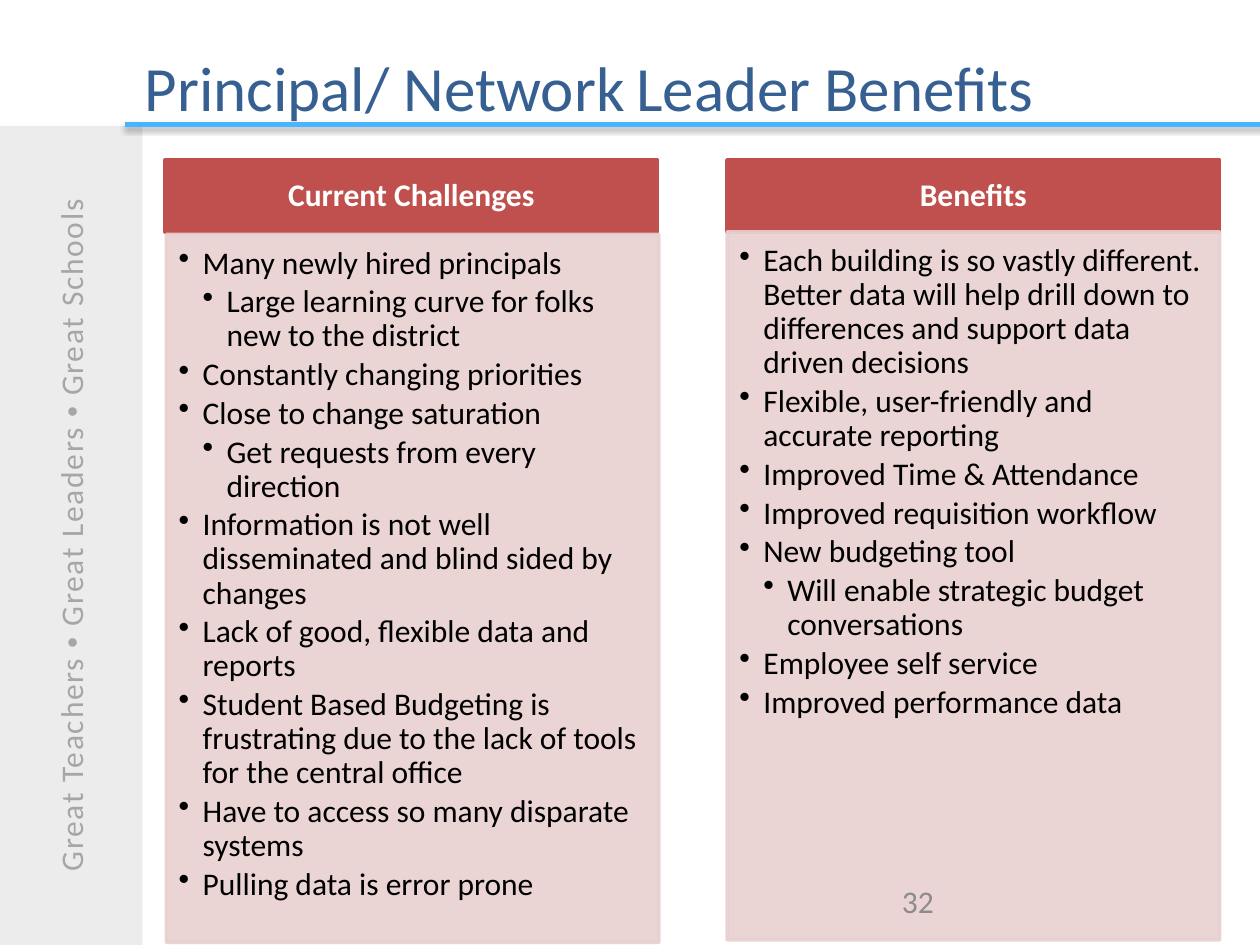
"""Build the slide comparing principals' challenges with the expected benefits."""
from dataclasses import dataclass
from typing import Optional

from lxml import etree
from pptx import Presentation, util as u
from pptx.dml.color import RGBColor
from pptx.enum import shapes, text
from pptx.oxml.ns import qn

WIDTH, HEIGHT = 10, 7.5
FONT = "Calibri"
RED, PINK, BLACK, WHITE = "C0504D", "E8D0D0", "000000", "FFFFFF"
NAVY, SKY, PALE, SILVER, GRAY = "376092", "49B4FF", "D9D9D9", "A6A6A6", "8C8C8C"
COLUMN_WIDTH, HEADER_TOP, HEADER_HEIGHT, BODY_HEIGHT = 3.91, 1.27, 0.57, 5.62
INDENT = 0.19


@dataclass(frozen=True)
class Box:
    """Position and size in inches."""
    left: float
    top: float
    width: float
    height: float

    def emu(self) -> list:
        return [u.Inches(v) for v in (self.left, self.top, self.width, self.height)]


@dataclass(frozen=True)
class Item:
    """One bullet and its nesting level."""
    words: str
    level: int = 0


@dataclass(frozen=True)
class Column:
    """A headed list with its left edges and body top."""
    heading: str
    left: float
    body_left: float
    body_top: float
    items: tuple


COLUMNS = (
    Column("Current Challenges", 1.31, 1.32, 1.86, (
        Item("Many newly hired principals"),
        Item("Large learning curve for folks new to the district", 1),
        Item("Constantly changing priorities"),
        Item("Close to change saturation"),
        Item("Get requests from every direction", 1),
        Item("Information is not well disseminated and blind sided by changes"),
        Item("Lack of good, flexible data and reports"),
        Item("Student Based Budgeting is frustrating due to the lack of tools "
             "for the central office"),
        Item("Have to access so many disparate systems"),
        Item("Pulling data is error prone"),
    )),
    Column("Benefits", 5.77, 5.77, 1.84, (
        Item("Each building is so vastly different. Better data will help drill "
             "down to differences and support data driven decisions"),
        Item("Flexible, user-friendly and accurate reporting"),
        Item("Improved Time & Attendance"),
        Item("Improved requisition workflow"),
        Item("New budgeting tool"),
        Item("Will enable strategic budget conversations", 1),
        Item("Employee self service"),
        Item("Improved performance data"),
    )),
)


def rgb(color: str) -> RGBColor:
    """Turn a hex string into a colour."""
    return RGBColor.from_string(color)


def set_font(font, color: str, size: float = 18, bold: bool = False, name: str = FONT) -> None:
    """Set face, size, weight and colour."""
    font.name, font.size, font.bold = name, u.Pt(size), bold
    font.color.rgb = rgb(color)


def set_alpha(fill_parent, percent: int) -> None:
    """Make every solid colour below an element translucent."""
    for color in fill_parent.iter(qn("a:srgbClr")):
        etree.SubElement(color, qn("a:alpha"), val=str(percent * 1000))


def add_panel(slide, box: Box, color: str, alpha: Optional[int] = None, outlined: bool = True):
    """Draw a filled rectangle with wrapped text."""
    shape = slide.shapes.add_shape(shapes.MSO_SHAPE.RECTANGLE, *box.emu())
    shape.shadow.inherit = False
    shape.fill.solid()
    shape.fill.fore_color.rgb = rgb(color)
    if outlined:
        shape.line.color.rgb = rgb(color)
        shape.line.width = u.Pt(2)
    else:
        shape.line.fill.background()
    if alpha:
        set_alpha(shape._element.spPr, alpha)
    shape.text_frame.word_wrap = True
    return shape


def set_insets(frame, left: float, top: float, right: float, bottom: float) -> None:
    """Set the text margins in inches."""
    frame.margin_left, frame.margin_top = u.Inches(left), u.Inches(top)
    frame.margin_right, frame.margin_bottom = u.Inches(right), u.Inches(bottom)


def add_bullet(paragraph, item: Item) -> None:
    """Write one bulleted paragraph."""
    paragraph.text = item.words
    paragraph.level = item.level
    paragraph.alignment = text.PP_ALIGN.LEFT
    paragraph.line_spacing, paragraph.space_after = 0.9, u.Pt(2.7)
    properties = paragraph._p.get_or_add_pPr()
    properties.set("marL", str(u.Inches(INDENT * (item.level + 1))))
    properties.set("indent", str(-u.Inches(INDENT)))
    etree.SubElement(properties, qn("a:buChar"), char="•")
    set_font(paragraph.font, BLACK)


def add_column(slide, column: Column) -> None:
    """Draw a heading panel and the list panel below it."""
    header = add_panel(slide, Box(column.left, HEADER_TOP, COLUMN_WIDTH, HEADER_HEIGHT), RED)
    frame = header.text_frame
    set_insets(frame, 0.14, 0.08, 0.14, 0.08)
    frame.vertical_anchor = text.MSO_ANCHOR.MIDDLE
    paragraph = frame.paragraphs[0]
    paragraph.text = column.heading
    paragraph.alignment, paragraph.line_spacing = text.PP_ALIGN.CENTER, 0.9
    set_font(paragraph.font, WHITE, bold=True)

    body = add_panel(slide, Box(column.body_left, column.body_top, COLUMN_WIDTH, BODY_HEIGHT),
                     PINK, alpha=90)
    frame = body.text_frame
    set_insets(frame, 0.1, 0.1, 0.14, 0.16)
    frame.vertical_anchor = text.MSO_ANCHOR.TOP
    for index, item in enumerate(column.items):
        add_bullet(frame.add_paragraph() if index else frame.paragraphs[0], item)


def add_sidebar(slide) -> None:
    """Draw the band with the rotated motto."""
    band = add_panel(slide, Box(-0.01, 1, 1.14, HEIGHT - 1), PALE, alpha=49, outlined=False)
    frame = band.text_frame
    frame.vertical_anchor = text.MSO_ANCHOR.MIDDLE
    frame._txBody.bodyPr.set("vert", "vert270")
    paragraph = frame.paragraphs[0]
    paragraph.alignment = text.PP_ALIGN.CENTER
    for words in ("Great Teachers ", "•", " Great Leaders ", "•", " Great Schools"):
        run = paragraph.add_run()
        run.text = words
        set_font(run.font, SILVER, name="Arial" if words == "•" else FONT)
        run._r.get_or_add_rPr().set("spc", "100")


def add_rule(slide) -> None:
    """Draw the shadowed line below the title."""
    rule = slide.shapes.add_connector(shapes.MSO_CONNECTOR.STRAIGHT, u.Inches(WIDTH + 0.05),
                                      u.Inches(0.99), u.Inches(0.99), u.Inches(0.99))
    rule.line.color.rgb = rgb(SKY)
    rule.line.width = u.Pt(3)
    effects = etree.SubElement(rule._element.spPr, qn("a:effectLst"))
    shadow = etree.SubElement(effects, qn("a:outerShdw"), blurRad=str(u.Pt(3.1)),
                              dist=str(u.Pt(1.8)), dir="5400000", rotWithShape="0")
    etree.SubElement(shadow, qn("a:srgbClr"), val=BLACK)
    set_alpha(shadow, 35)


def add_label(slide, box: Box, words: str, color: str, size: float,
              anchor=text.MSO_ANCHOR.TOP):
    """Write a single line of text and return its paragraph."""
    frame = slide.shapes.add_textbox(*box.emu()).text_frame
    frame.word_wrap = True
    frame.vertical_anchor = anchor
    paragraph = frame.paragraphs[0]
    paragraph.text = words
    set_font(paragraph.font, color, size)
    return paragraph


def add_title(slide) -> None:
    """Write the title with its narrower middle space."""
    paragraph = add_label(slide, Box(1.05, 0.21, 7.77, 0.95), "Principal/ Network", NAVY, 36,
                          text.MSO_ANCHOR.MIDDLE)
    space = paragraph.add_run()
    space.text = " "
    set_font(space.font, BLACK, 28, bold=True)
    paragraph.add_run().text = "Leader Benefits"


def main() -> None:
    """Assemble and save the slide."""
    presentation = Presentation()
    presentation.slide_width, presentation.slide_height = u.Inches(WIDTH), u.Inches(HEIGHT)
    slide = presentation.slides.add_slide(presentation.slide_layouts[6])
    add_sidebar(slide)
    add_rule(slide)
    for column in COLUMNS:
        add_column(slide, column)
    add_title(slide)
    add_label(slide, Box(7.06, 6.95, 2.25, 0.4), "32", GRAY, 18)
    presentation.save("out.pptx")


if __name__ == "__main__":
    main()
